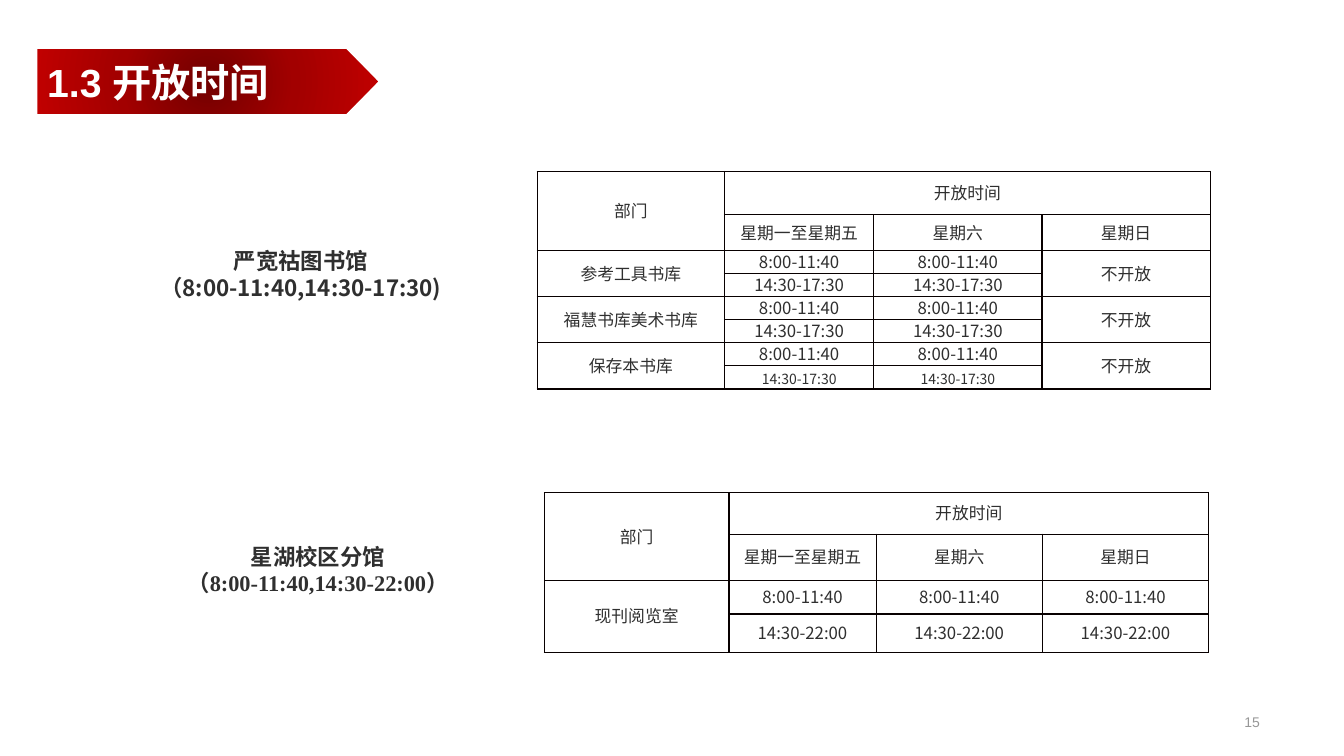
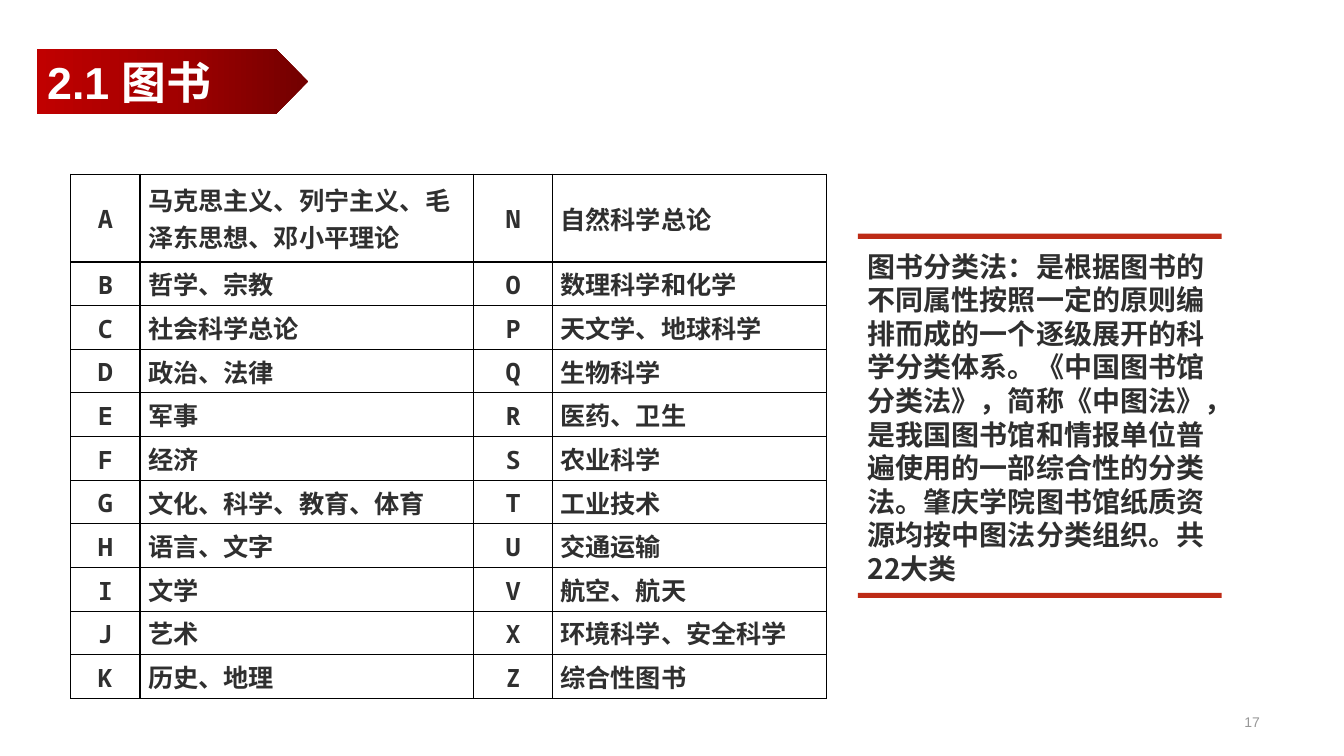
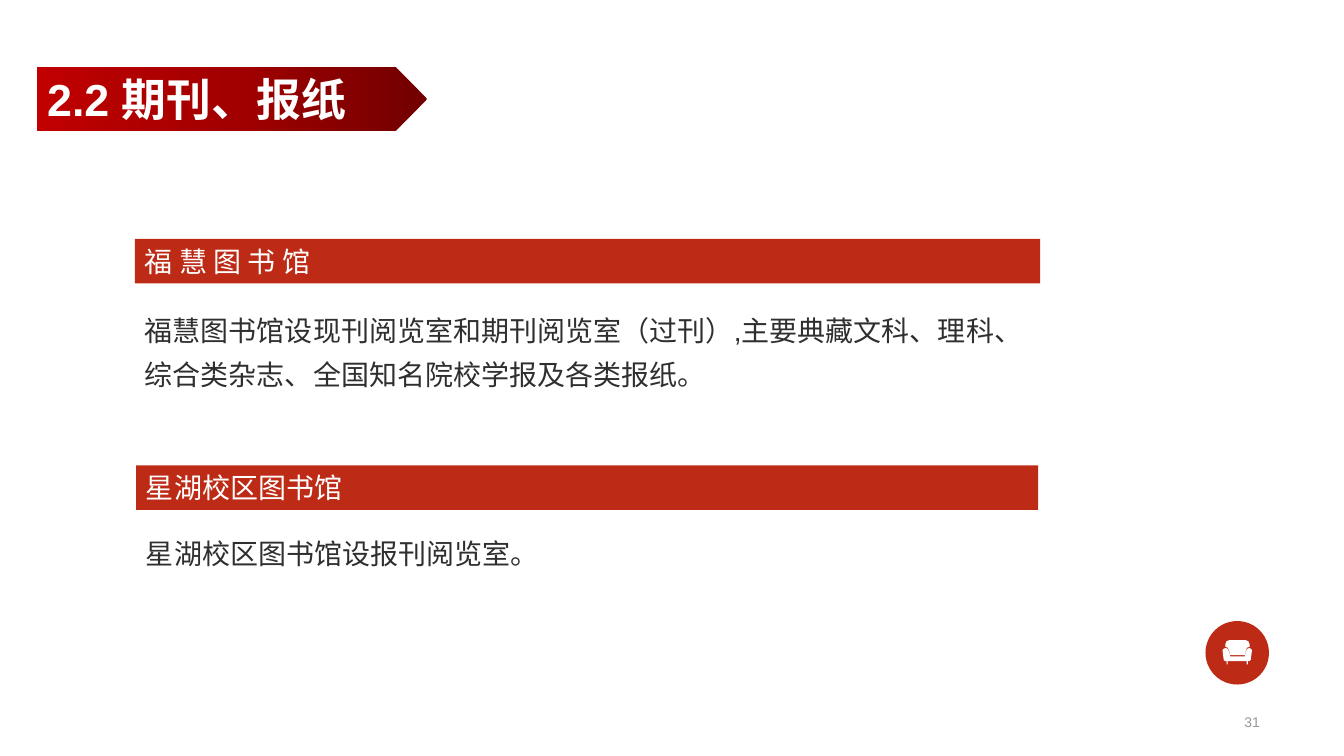
from lxml.etree import SubElement
from pptx import Presentation
from pptx.dml.color import RGBColor
from pptx.enum.shapes import MSO_SHAPE
from pptx.enum.text import MSO_ANCHOR, PP_ALIGN
from pptx.oxml import parse_xml
from pptx.oxml.ns import qn
from pptx.util import Cm, Pt

NS = 'xmlns:a="http://schemas.openxmlformats.org/drawingml/2006/main"'
RED, INK, GREY, WHITE = "BD2B16", "2F2F2F", "979797", "FFFFFF"
SHADES = [(0, "720000"), (50, "A20000"), (100, "C00000")]
CJK, SERIF, SANS, MONO = "Noto Sans CJK SC", "Times New Roman", "Arial", "Noto Sans Mono"
LEFT, CENTER, RIGHT = PP_ALIGN.LEFT, PP_ALIGN.CENTER, PP_ALIGN.RIGHT

# Content: sizes are in centimetres
HEADS = [
    dict(text="1.3 开放时间", top=1.24, width=8.59, size=28, radial=True, page="15"),
    dict(text="2.1 图书", top=1.24, width=6.83, size=32, radial=False, page="17"),
    dict(text="2.2 期刊、报纸", top=1.68, width=9.83, size=32, radial=False, page="31"),
]

HOURS_HEAD = [
    ["部门", "开放时间", "", ""],
    ["", "星期一至星期五", "星期六", "星期日"],
]
HEAD_SPANS = [(0, 0, 1, 0), (0, 1, 0, 3)]
ROOMS = ["参考工具书库", "福慧书库美术书库", "保存本书库"]
AM, PM, LATE, SHUT = "8:00-11:40", "14:30-17:30", "14:30-22:00", "不开放"
LIBRARIES = [
    dict(
        box=(3.76, 6.12), lines=[("严宽祜图书馆", SERIF), ("（8:00-11:40,14:30-17:30)", CJK)],
        at=(13.54, 4.32), cols=[4.72, 3.76, 4.24, 4.24], heights=[1.09, 0.91] + [0.58] * 6,
        rows=[row for room in ROOMS for row in ([room, AM, AM, SHUT], ["", PM, PM, ""])],
        spans=[(r, c, r + 1, c) for r in (2, 4, 6) for c in (0, 3)],
        small=7,
    ),
    dict(
        box=(4.19, 13.56), lines=[("星湖校区分馆", SERIF), ("（8:00-11:40,14:30-22:00）", SERIF)],
        at=(13.72, 12.42), cols=[4.65, 3.71, 4.19, 4.19], heights=[1.04, 1.17, 0.84, 0.97],
        rows=[["现刊阅览室", AM, AM, AM], ["", LATE, LATE, LATE]],
        spans=[(2, 0, 3, 0)],
        small=None,
    ),
]

CLASSES = [
    ("A", "马克思主义、列宁主义、毛泽东思想、邓小平理论", "N", "自然科学总论"),
    ("B", "哲学、宗教", "O", "数理科学和化学"),
    ("C", "社会科学总论", "P", "天文学、地球科学"),
    ("D", "政治、法律", "Q", "生物科学"),
    ("E", "军事", "R", "医药、卫生"),
    ("F", "经济", "S", "农业科学"),
    ("G", "文化、科学、教育、体育", "T", "工业技术"),
    ("H", "语言、文字", "U", "交通运输"),
    ("I", "文学", "V", "航空、航天"),
    ("J", "艺术", "X", "环境科学、安全科学"),
    ("K", "历史、地理", "Z", "综合性图书"),
]
METHOD = (
    "图书分类法：是根据图书的不同属性按照一定的原则编排而成的一个逐级展开的科学分类体系。"
    "《中国图书馆分类法》，简称《中图法》，是我国图书馆和情报单位普遍使用的一部综合性的分类法。"
    "肇庆学院图书馆纸质资源均按中图法分类组织。共22大类"
)

HOLDINGS = [
    dict(name="福 慧 图 书 馆", at=(3.4, 6.02), width=22.81, height=2.46, pitch=31.2,
         text="福慧图书馆设现刊阅览室和期刊阅览室（过刊）,主要典藏文科、理科、"
              "综合类杂志、全国知名院校学报及各类报纸。"),
    dict(name="星湖校区图书馆", at=(3.43, 11.73), width=22.73, height=1.27, pitch=28.8,
         text="星湖校区图书馆设报刊阅览室。"),
]

# Sofa outlines in hundredths of a centimetre
SEAT = [(7, 20), (13, 22), (15, 26), (19, 41), (56, 41), (60, 26), (62, 22), (68, 20),
        (73, 23), (74, 27), (71, 50), (68, 53), (64, 53), (64, 61), (61, 61), (61, 53),
        (13, 53), (13, 61), (10, 61), (10, 53), (6, 53), (3, 50), (0, 27), (1, 23)]
BACK = [(17, 0), (58, 0), (65, 3), (68, 10), (68, 17), (62, 19), (59, 24), (56, 38),
        (19, 38), (16, 24), (13, 19), (7, 17), (7, 10), (10, 3)]


def color(code):
    return RGBColor.from_string(code)


def write(frame, lines, size, ink=INK, bold=False, align=LEFT, pitch=None, anchor=MSO_ANCHOR.TOP):
    """Fill a text frame with (text, font) lines; pitch is the line height in points."""
    frame.word_wrap = True
    frame.vertical_anchor = anchor
    for i, (text, face) in enumerate(lines):
        para = frame.add_paragraph() if i else frame.paragraphs[0]
        para.alignment = align
        if pitch:
            para.line_spacing = Pt(pitch)
        run = para.add_run()
        run.text = text
        run.font.color.rgb = color(ink)
        for key, value in dict(size=Pt(size), bold=bold, name=face).items():
            setattr(run.font, key, value)
        SubElement(run._r.get_or_add_rPr(), qn("a:ea"), typeface=CJK)


def label(slide, box, lines, size, **style):
    shape = slide.shapes.add_textbox(*map(Cm, box))
    write(shape.text_frame, lines, size, **style)


def paint(shape, fill):
    shape.shadow.inherit = False
    shape.line.fill.background()
    if fill:
        shape.fill.solid()
        shape.fill.fore_color.rgb = color(fill)


def block(slide, kind, box, fill=RED):
    shape = slide.shapes.add_shape(kind, *map(Cm, box))
    paint(shape, fill)
    return shape


def banner(slide, text, top, width, size, radial, page):
    """Add the arrow title and the page number."""
    arrow = block(slide, MSO_SHAPE.PENTAGON, (0.94, top, width, 1.63), None)
    stops = "".join(f'<a:gs pos="{p * 1000}"><a:srgbClr val="{c}"/></a:gs>' for p, c in SHADES)
    if radial:
        way = '<a:path path="circle"><a:fillToRect l="50000" t="50000" r="50000" b="50000"/></a:path>'
    else:
        way = '<a:lin ang="10800000" scaled="0"/>'
    fill = parse_xml(f"<a:gradFill {NS}><a:gsLst>{stops}</a:gsLst>{way}</a:gradFill>")
    arrow._element.spPr.find(qn("a:prstGeom")).addnext(fill)
    write(arrow.text_frame, [(text, SANS)], size, ink=WHITE, bold=True, anchor=MSO_ANCHOR.MIDDLE)
    label(slide, (24.61, 17.88, 7.39, 0.61), [(page, SANS)], 10, ink=GREY, align=RIGHT,
          anchor=MSO_ANCHOR.MIDDLE)


def border(cell, line):
    props = cell._tc.get_or_add_tcPr()
    for i, side in enumerate("LRTB"):
        props.insert(i, parse_xml(
            f'<a:ln{side} {NS} w="12700"><a:solidFill><a:srgbClr val="{line}"/></a:solidFill></a:ln{side}>'))


def grid(slide, at, cols, heights, rows, style, spans=(), pad=0.18, line="080000"):
    """Draw a ruled table; style(r, c) gives the font and text settings of a cell."""
    shape = slide.shapes.add_table(len(rows), len(cols), *map(Cm, (*at, sum(cols), sum(heights))))
    table = shape.table
    table.first_row = table.horz_banding = False
    for col, width in zip(table.columns, cols):
        col.width = Cm(width)
    for r, (row, height) in enumerate(zip(rows, heights)):
        table.rows[r].height = Cm(height)
        for c, text in enumerate(row):
            cell = table.cell(r, c)
            cell.fill.background()
            border(cell, line)
            cell.margin_left = cell.margin_right = Cm(pad)
            cell.margin_top = cell.margin_bottom = 0
            cell.vertical_anchor = MSO_ANCHOR.MIDDLE
            if text:
                face, look = style(r, c)
                write(cell.text_frame, [(text, face)], anchor=None, **look)
                cell.vertical_anchor = MSO_ANCHOR.MIDDLE
    for top, left, bottom, right in spans:
        table.cell(top, left).merge(table.cell(bottom, right))


def hours(slide):
    for lib in LIBRARIES:
        def style(r, c):
            return CJK, dict(size=10 if r == lib["small"] else 12, align=CENTER, pitch=16)

        label(slide, (*lib["box"], 7.65, 1.63), lib["lines"], 16, bold=True, align=CENTER, pitch=19)
        grid(slide, lib["at"], lib["cols"], lib["heights"], HOURS_HEAD + lib["rows"], style,
             HEAD_SPANS + lib["spans"])


def books(slide):
    def style(r, c):
        return MONO, dict(size=18, bold=True, align=LEFT if c % 2 else CENTER, pitch=26)

    grid(slide, (1.78, 4.39), [1.75, 8.41, 1.98, 6.91], [2.21] + [1.1] * 10, CLASSES, style,
         pad=0.2, line="000000")
    label(slide, (21.62, 6.15, 9.17, 8.79), [(METHOD, CJK)], 20, bold=True, pitch=24)
    for top in (5.89, 14.94):
        block(slide, MSO_SHAPE.RECTANGLE, (21.62, top, 9.17, 0.13))


def sofa(slide):
    block(slide, MSO_SHAPE.OVAL, (30.38, 15.65, 1.6, 1.6))
    pen = slide.shapes.build_freeform(*SEAT[0], scale=Cm(0.01))
    pen.add_line_segments(SEAT[1:])
    pen.move_to(*BACK[0])
    pen.add_line_segments(BACK[1:])
    paint(pen.convert_to_shape(Cm(30.81), Cm(16.13)), WHITE)


def journals(slide):
    for part in HOLDINGS:
        left, top = part["at"]
        bar = block(slide, MSO_SHAPE.SNIP_1_RECTANGLE, (left, top, part["width"], 1.12))
        bar.adjustments[0] = 0
        write(bar.text_frame, [(part["name"], SANS)], 20, ink=WHITE, anchor=MSO_ANCHOR.MIDDLE)
        label(slide, (left, top + 1.5, part["width"] + 0.1, part["height"]),
              [(part["text"], SANS)], 20, pitch=part["pitch"])
    sofa(slide)


def main():
    deck = Presentation()
    deck.slide_width, deck.slide_height = Cm(33.87), Cm(19.05)
    for head, body in zip(HEADS, (hours, books, journals)):
        slide = deck.slides.add_slide(deck.slide_layouts[6])
        body(slide)
        banner(slide, **head)
    deck.save("out.pptx")


if __name__ == "__main__":
    main()
